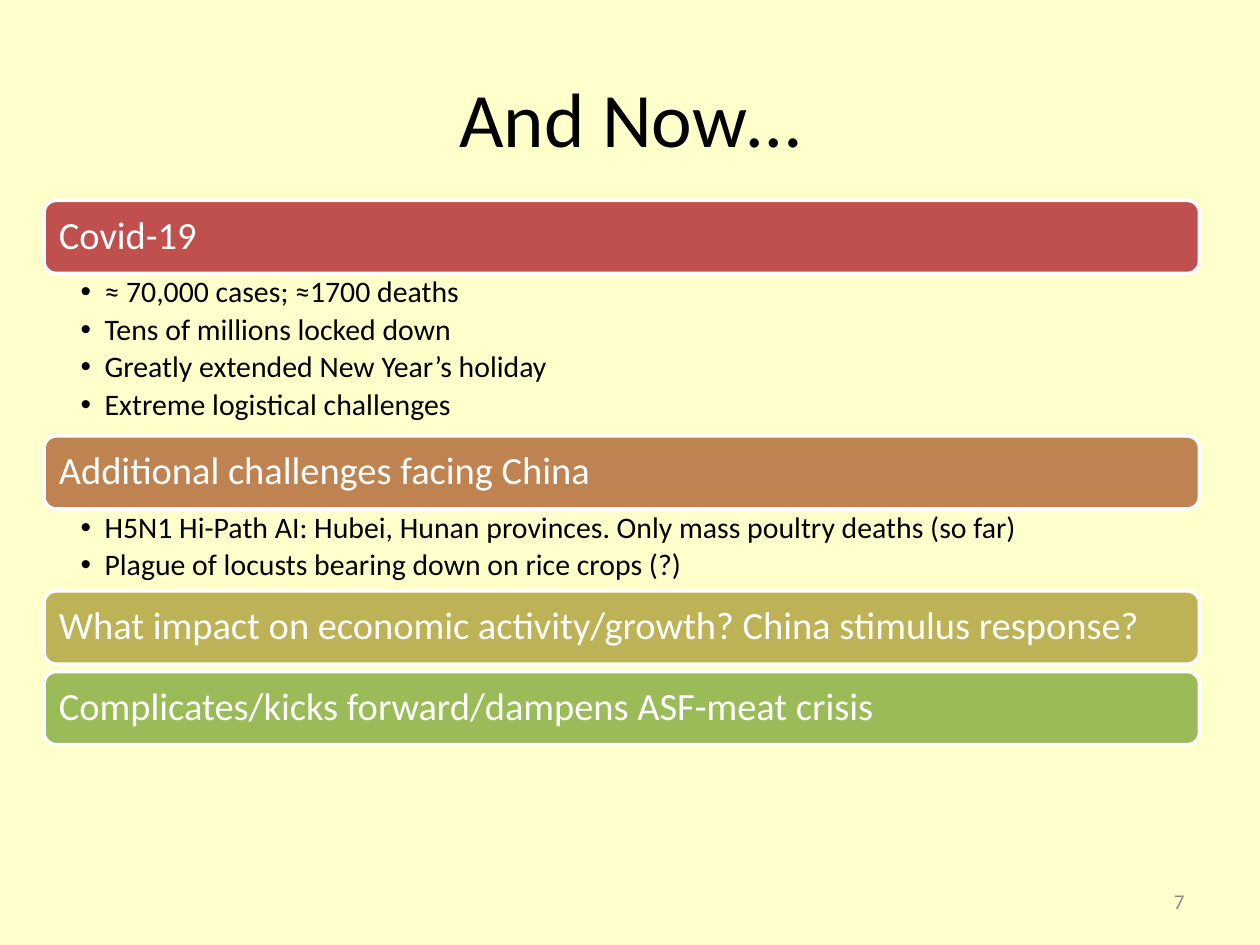
from lxml.etree import SubElement
from pptx import Presentation
from pptx.dml.color import RGBColor
from pptx.enum.shapes import MSO_SHAPE as Shape
from pptx.enum.text import MSO_ANCHOR as Anchor, PP_ALIGN as Align
from pptx.oxml.ns import qn
from pptx.util import Inches, Pt

SLIDE_WIDTH, SLIDE_HEIGHT = Inches(10), Inches(7.5)
COLUMNS, ROWS = 1000, 750
LEFT, WIDTH = 35, 917
FIRST_TOP, BAR_HEIGHT, BAR_GAP = 159, 58, 6
BULLETS_PADDING, BULLET_HEIGHT = 1, 32
INDENT = 19

SECTIONS = [
    ("Covid-19", "C0504D", [
        "≈ 70,000 cases; ≈1700 deaths",
        "Tens of millions locked down",
        "Greatly extended New Year’s holiday",
        "Extreme logistical challenges",
    ]),
    ("Additional challenges facing China", "BE8351", [
        "H5N1 Hi-Path AI: Hubei, Hunan provinces. Only mass poultry deaths (so far)",
        "Plague of locusts bearing down on rice crops (?)",
    ]),
    ("What impact on economic activity/growth? China stimulus response?", "BDB255", []),
    ("Complicates/kicks forward/dampens ASF-meat crisis", "9BBB59", []),
]


def color(value):
    return RGBColor.from_string(value)


def across(columns):
    return round(SLIDE_WIDTH * columns / COLUMNS)


def down(rows):
    return round(SLIDE_HEIGHT * rows / ROWS)


def box(left, top, width, height):
    return across(left), down(top), across(width), down(height)


def apply(target, values):
    for name, value in values.items():
        setattr(target, name, value)


def write(shape, lines, size, text_color, frame_format, paragraph_format):
    frame = shape.text_frame
    frame.text = "\n".join(lines)
    apply(frame, {"word_wrap": True, **frame_format})
    for paragraph in frame.paragraphs:
        apply(paragraph, paragraph_format)
        for run in paragraph.runs:
            apply(run.font, {"name": "Calibri", "size": Pt(size)})
            run.font.color.rgb = color(text_color)


def add_bullet(paragraph):
    properties = paragraph._p.get_or_add_pPr()
    properties.set("marL", str(across(INDENT)))
    properties.set("indent", str(-across(INDENT)))
    SubElement(properties, qn("a:buFont")).set("typeface", "Arial")
    SubElement(properties, qn("a:buChar")).set("char", "•")


def set_title(slide, text):
    title = slide.shapes.title
    apply(title, dict(zip(("left", "top", "width", "height"), box(50, 30, 900, 125))))
    write(title, [text], 44, "000000",
          {"vertical_anchor": Anchor.MIDDLE}, {"alignment": Align.CENTER})


def add_bar(slide, text, fill, top):
    bar = slide.shapes.add_shape(Shape.ROUNDED_RECTANGLE, *box(LEFT, top, WIDTH, BAR_HEIGHT))
    bar.shadow.inherit = False
    bar.fill.solid()
    bar.fill.fore_color.rgb = color(fill)
    bar.line.color.rgb = color("FFFFFF")
    bar.line.width = Pt(2)
    margins = dict.fromkeys(
        ("margin_left", "margin_top", "margin_right", "margin_bottom"), across(9))
    write(bar, [text], 22, "FFFFFF", {"vertical_anchor": Anchor.MIDDLE, **margins},
          {"alignment": Align.LEFT, "line_spacing": 0.9})


def add_bullets(slide, lines, top, height):
    bullets = slide.shapes.add_textbox(*box(LEFT, top, WIDTH, height))
    margins = {"margin_left": across(29), "margin_right": across(17),
               "margin_top": down(3), "margin_bottom": down(3)}
    write(bullets, lines, 17, "000000", margins,
          {"level": 1, "line_spacing": 0.9, "space_after": Pt(3)})
    for paragraph in bullets.text_frame.paragraphs:
        add_bullet(paragraph)


def add_sections(slide):
    top = FIRST_TOP
    for heading, fill, lines in SECTIONS:
        add_bar(slide, heading, fill, top)
        top += BAR_HEIGHT
        if lines:
            height = BULLETS_PADDING + BULLET_HEIGHT * len(lines)
            add_bullets(slide, lines, top, height)
            top += height
        else:
            top += BAR_GAP


def add_slide_number(slide, number):
    number_box = slide.shapes.add_textbox(*box(717, 695, 233, 40))
    write(number_box, [number], 12, "8C8C8C",
          {"vertical_anchor": Anchor.MIDDLE}, {"alignment": Align.RIGHT})


def main():
    presentation = Presentation()
    apply(presentation, {"slide_width": SLIDE_WIDTH, "slide_height": SLIDE_HEIGHT})
    slide = presentation.slides.add_slide(presentation.slide_layouts.get_by_name("Title Only"))
    slide.background.fill.solid()
    slide.background.fill.fore_color.rgb = color("FFFFCC")
    set_title(slide, "And Now…")
    add_sections(slide)
    add_slide_number(slide, "7")
    presentation.save("out.pptx")


if __name__ == "__main__":
    main()
